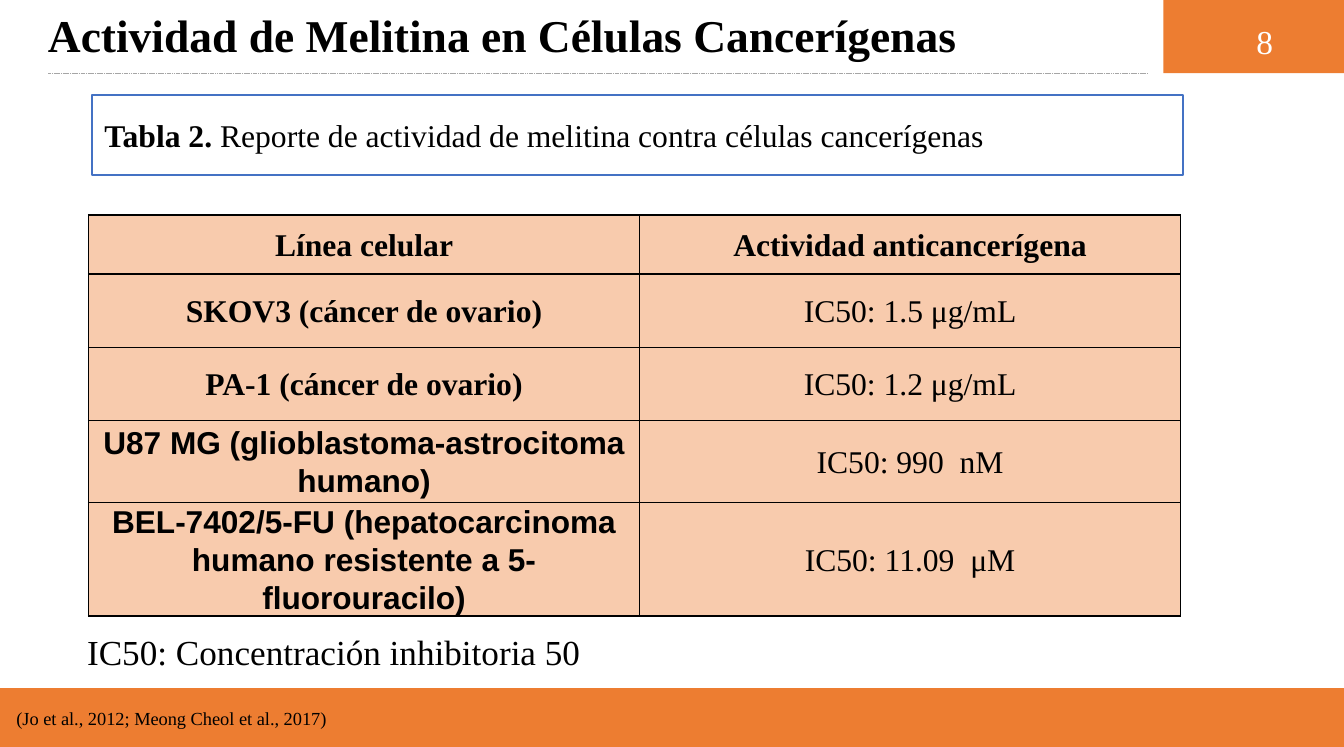
from lxml import etree
from pptx import Presentation
from pptx.dml.color import RGBColor
from pptx.enum.dml import MSO_LINE
from pptx.enum.shapes import MSO_CONNECTOR, MSO_SHAPE
from pptx.enum.text import MSO_ANCHOR, MSO_AUTO_SIZE, PP_ALIGN
from pptx.oxml import parse_xml
from pptx.oxml.ns import nsdecls, qn
from pptx.util import Cm, Pt

COLORS = {"black": "000000", "white": "FFFFFF", "orange": "ED7D31",
          "peach": "F8CBAD", "blue": "4472C4", "gray": "A6A6A6"}
SERIF, SANS = "Times New Roman", "Arial"


def rgb(name):
    return RGBColor.from_string(COLORS[name])


def add_run(p, text, size, bold=False, font=SERIF, color="black"):
    r = p.add_run()
    r.text = text
    r.font.size, r.font.bold, r.font.name = Pt(size), bold, font
    r.font.color.rgb = rgb(color)


prs = Presentation()
prs.slide_width, prs.slide_height = Cm(27), Cm(15.01)
s = prs.slides.add_slide(prs.slide_layouts[5])

# Dashed rule under the title
rule = s.shapes.add_connector(MSO_CONNECTOR.STRAIGHT, Cm(0.97), Cm(1.47), Cm(23.06), Cm(1.47))
rule.line.color.rgb = rgb("gray")
rule.line.width = Pt(0.25)
rule.line.dash_style = MSO_LINE.SQUARE_DOT
etree.SubElement(rule._element.spPr, qn("a:effectLst"))

# Number block, caption frame and footer bar
blocks = {}
for name, kind, box, fill, line in [
    ("number", MSO_SHAPE.RECTANGLE, (23.37, 0, 3.63, 1.47), "orange", None),
    ("caption", MSO_SHAPE.ROUNDED_RECTANGLE, (1.85, 1.91, 21.92, 1.6), "white", "blue"),
    ("footer", MSO_SHAPE.RECTANGLE, (0, 13.84, 27, 1.15), "orange", "orange"),
]:
    sp = s.shapes.add_shape(kind, *map(Cm, box))
    sp.shadow.inherit = False
    sp.fill.solid()
    sp.fill.fore_color.rgb = rgb(fill)
    if line:
        sp.line.color.rgb = rgb(line)
        sp.line.width = Pt(1)
    else:
        sp.line.fill.background()
    blocks[name] = sp

# Table caption
caption = blocks["caption"]
caption.adjustments[0] = 0
tf = caption.text_frame
tf.word_wrap = True
tf.vertical_anchor = MSO_ANCHOR.MIDDLE
p = tf.paragraphs[0]
p.alignment = PP_ALIGN.LEFT
add_run(p, "Tabla 2.", 18, bold=True)
add_run(p, " Reporte de actividad de melitina contra células cancerígenas", 18)

# Title
title = s.shapes.title
title.left, title.top, title.width, title.height = map(Cm, (0.71, 0.23, 21.56, 1.14))
tf = title.text_frame
tf.auto_size = MSO_AUTO_SIZE.NONE
tf.word_wrap = True
tf.vertical_anchor = MSO_ANCHOR.MIDDLE
p = tf.paragraphs[0]
p.alignment = PP_ALIGN.LEFT
p.line_spacing = 0.8
add_run(p, "Actividad de Melitina en Células Cancerígenas", 25.9, bold=True)

# Activity table: cell line, its font, activity
rows = [
    ("Línea celular", SERIF, "Actividad anticancerígena"),
    ("SKOV3 (cáncer de ovario)", SERIF, "IC50: 1.5 μg/mL"),
    ("PA-1 (cáncer de ovario)", SERIF, "IC50: 1.2 μg/mL"),
    ("U87 MG (glioblastoma-astrocitoma humano)", SANS, "IC50: 990  nM"),
    ("BEL-7402/5-FU (hepatocarcinoma humano resistente a 5-fluorouracilo)", SANS,
     "IC50: 11.09  μM"),
]
heights = [1.19, 1.47, 1.47, 1.65, 1.65]
table = s.shapes.add_table(len(rows), 2, Cm(1.78), Cm(4.32), Cm(21.94), Cm(sum(heights))).table
table.first_row = table.horz_banding = False
for col, width in zip(table.columns, (11.07, 10.87)):
    col.width = Cm(width)
for i, (cell_line, font, activity) in enumerate(rows):
    table.rows[i].height = Cm(heights[i])
    for j, text in enumerate((cell_line, activity)):
        cell = table.cell(i, j)
        cell.vertical_anchor = MSO_ANCHOR.MIDDLE
        cell.margin_left = cell.margin_right = Cm(0.1)
        cell.margin_top = cell.margin_bottom = 0
        for side in ("lnL", "lnR", "lnT", "lnB"):
            cell._tc.get_or_add_tcPr().append(parse_xml(
                f'<a:{side} {nsdecls("a")} w="12700"><a:solidFill>'
                f'<a:srgbClr val="{COLORS["black"]}"/></a:solidFill></a:{side}>'))
        cell.fill.solid()
        cell.fill.fore_color.rgb = rgb("peach")
        p = cell.text_frame.paragraphs[0]
        p.alignment = PP_ALIGN.CENTER
        p.line_spacing = 1.07
        p.space_after = Pt(8)
        add_run(p, text, 18, bold=i == 0 or j == 0, font=font if j == 0 else SERIF)

# Table note, slide number and citation
for text, box, size, color, align, spacing in [
    ("IC50: Concentración inhibitoria 50", (1.5, 12.55, 11.61, 1.12), 20, "black", PP_ALIGN.LEFT, 1),
    ("8", (24.71, 0.3, 1.4, 1.07), 19, "white", PP_ALIGN.CENTER, 1),
    ("(Jo et al., 2012; Meong Cheol et al., 2017)", (0.08, 14.05, 15.62, 0.71), 10.5, "black",
     PP_ALIGN.LEFT, 1.07),
]:
    tf = s.shapes.add_textbox(*map(Cm, box)).text_frame
    tf.word_wrap = True
    p = tf.paragraphs[0]
    p.alignment = align
    p.line_spacing = spacing
    add_run(p, text, size, color=color)

prs.save("out.pptx")
